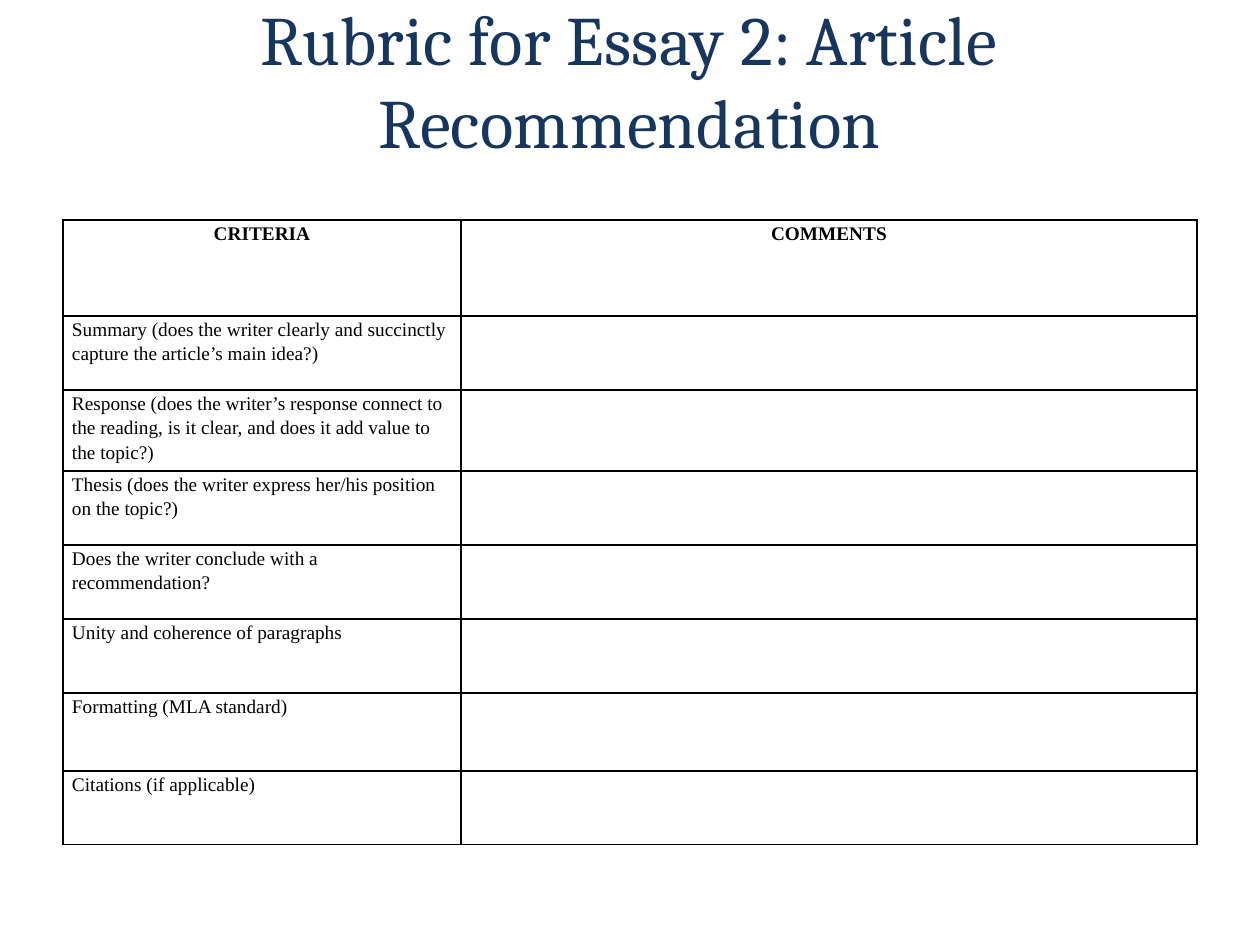
import pptx
import pptx.dml.color
import pptx.enum.text
import pptx.oxml
import pptx.oxml.ns
import pptx.util
from dataclasses import dataclass

SCALE = 914400 // 126
ALIGN = pptx.enum.text.PP_ALIGN


@dataclass(frozen=True)
class Theme:
    title_font: str = "Cambria"
    title_size: float = 39.6
    title_color: str = "17365D"
    body_font: str = "Times New Roman"
    body_size: float = 11
    ink: str = "000000"
    border_pt: float = 1


THEME = Theme()
TITLE = "Rubric for Essay 2: Article Recommendation"
HEADINGS = ["CRITERIA", "COMMENTS"]
CRITERIA = [
    ("Summary (does the writer clearly and succinctly capture the article’s main idea?)", 74),
    ("Response (does the writer’s response connect to the reading, is it clear, "
     "and does it add value to the topic?)", 81),
    ("Thesis (does the writer express her/his position on the topic?)", 74),
    ("Does the writer conclude with a recommendation?", 74),
    ("Unity and coherence of paragraphs", 74),
    ("Formatting (MLA standard)", 78),
    ("Citations (if applicable)", 74),
]
HEADING_HEIGHT = 96
COLUMN_WIDTHS = [398, 736]


def px(n):
    return pptx.util.Emu(n * SCALE)


def set_attrs(obj, values):
    for name, value in values.items():
        setattr(obj, name, value)


def write(p, text, font, size, color, bold=False):
    r = p.add_run()
    r.text = text
    set_attrs(r.font, {"name": font, "size": pptx.util.Pt(size), "bold": bold})
    r.font.color.rgb = pptx.dml.color.RGBColor.from_string(color)
    return r


def add_title(s, left, top, width, height):
    tf = s.shapes.add_textbox(*map(px, (left, top, width, height))).text_frame
    # The deep bottom margin lifts the two lines towards the slide's top edge.
    set_attrs(tf, {
        "word_wrap": True,
        "vertical_anchor": pptx.enum.text.MSO_ANCHOR.MIDDLE,
        "margin_top": 0,
        "margin_bottom": px(75),
    })
    p = tf.paragraphs[0]
    p.alignment = ALIGN.CENTER
    r = write(p, TITLE, THEME.title_font, THEME.title_size, THEME.title_color)
    r.font._element.set("spc", "20")


def add_borders(cell):
    tc_pr = cell._tc.get_or_add_tcPr()
    width = pptx.util.Pt(THEME.border_pt)
    for side in ("lnL", "lnR", "lnT", "lnB"):
        tc_pr.append(pptx.oxml.parse_xml(
            f'<a:{side} {pptx.oxml.ns.nsdecls("a")} w="{width}"><a:solidFill>'
            f'<a:srgbClr val="{THEME.ink}"/></a:solidFill></a:{side}>'))


def fill_cell(cell, text, heading):
    add_borders(cell)
    cell.fill.background()
    set_attrs(cell, {"margin_left": px(9), "margin_right": px(9),
                     "margin_top": 0, "margin_bottom": 0})
    if text:
        p = cell.text_frame.paragraphs[0]
        set_attrs(p, {"line_spacing": 1.15,
                      "alignment": ALIGN.CENTER if heading else ALIGN.LEFT})
        write(p, text, THEME.body_font, THEME.body_size, THEME.ink, heading)


def add_rubric(s, left, top):
    rows = [(HEADINGS, HEADING_HEIGHT)] + [([text, ""], h) for text, h in CRITERIA]
    width, height = sum(COLUMN_WIDTHS), sum(h for _, h in rows)
    table = s.shapes.add_table(len(rows), len(COLUMN_WIDTHS),
                               *map(px, (left, top, width, height))).table
    set_attrs(table, {"first_row": False, "horz_banding": False})
    for column, w in zip(table.columns, COLUMN_WIDTHS):
        column.width = px(w)
    for i, (texts, h) in enumerate(rows):
        table.rows[i].height = px(h)
        for j, text in enumerate(texts):
            fill_cell(table.cell(i, j), text, heading=i == 0)


def main():
    prs = pptx.Presentation()
    set_attrs(prs, {"slide_width": px(1260), "slide_height": px(945)})
    s = prs.slides.add_slide(prs.slide_layouts[6])
    add_title(s, 63, 38, 1134, 157)
    add_rubric(s, 63, 220)
    prs.save("out.pptx")


if __name__ == "__main__":
    main()
